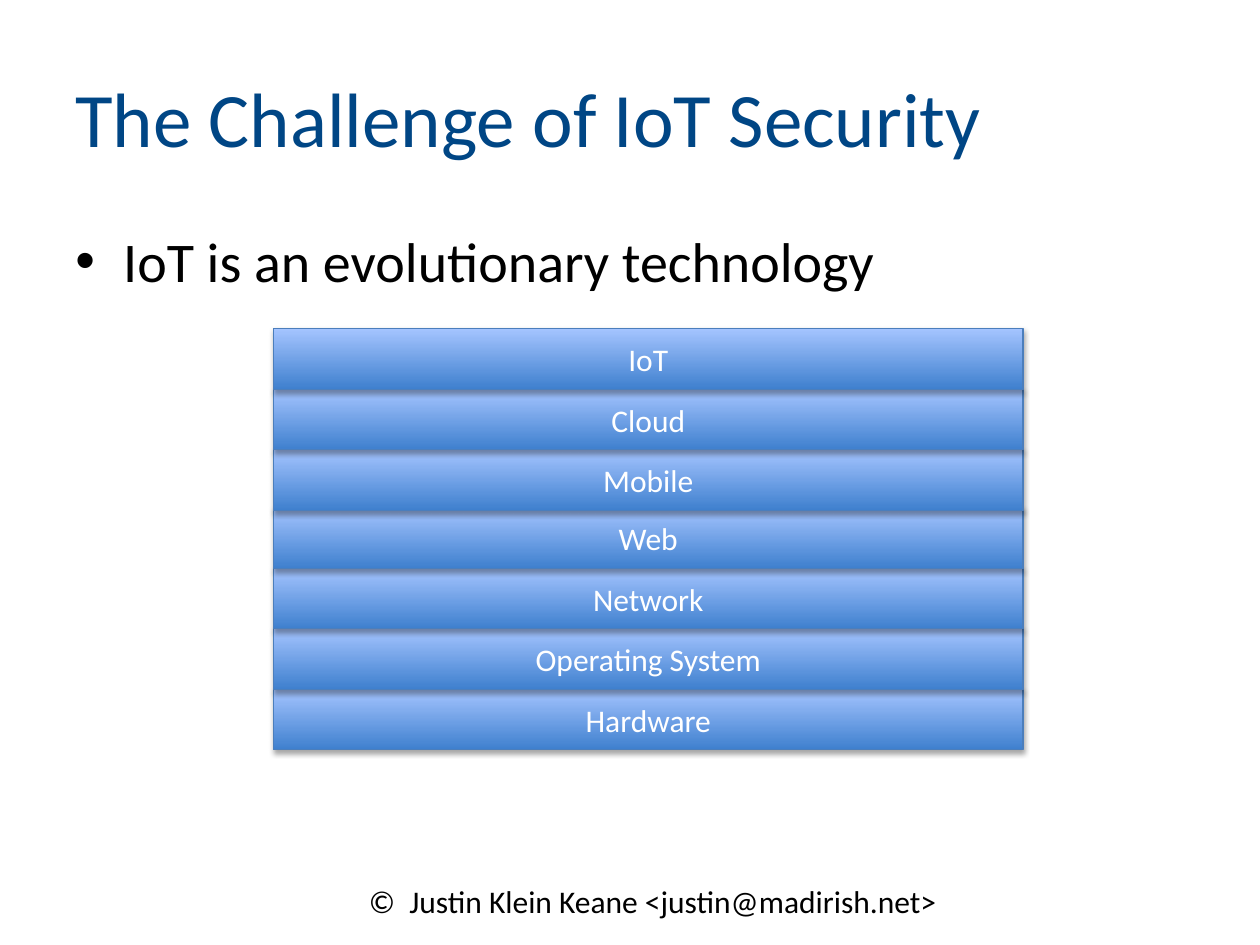
from lxml.etree import SubElement
from pptx import Presentation
from pptx.dml.color import RGBColor
from pptx.enum.shapes import MSO_SHAPE as Shape
from pptx.enum.text import MSO_ANCHOR as Anchor, PP_ALIGN as Align
from pptx.oxml.ns import qn
from pptx.util import Inches, Pt

FONT = "Calibri"
LAYER_LEFT, LAYER_WIDTH, LAYER_HEIGHT = 2.17, 5.95, 0.48
# Top of each stack and its layers, from top to bottom
STACKS = [
    (2.61, ["IoT", "Cloud", "Mobile"]),
    (4.03, ["Web", "Network", "Operating System", "Hardware"]),
]


def color(hex_string):
    return RGBColor.from_string(hex_string)


def set_text(shape, text, size, hex_color, anchor=Anchor.TOP, align=Align.LEFT, bullet_indent=0):
    frame = shape.text_frame
    frame.word_wrap = True
    frame.vertical_anchor = anchor
    paragraph = frame.paragraphs[0]
    paragraph.text = text
    paragraph.alignment = align
    if bullet_indent:
        properties = paragraph._p.get_or_add_pPr()
        properties.set("marL", str(Inches(bullet_indent)))
        properties.set("indent", str(-Inches(bullet_indent)))
        SubElement(properties, qn("a:buFont"), typeface="Arial")
        SubElement(properties, qn("a:buChar"), char="•")
    paragraph.font.name = FONT
    paragraph.font.size = Pt(size)
    paragraph.font.color.rgb = color(hex_color)


def add_text(slide, box, text, size, hex_color, **options):
    shape = slide.shapes.add_textbox(*map(Inches, box))
    set_text(shape, text, size, hex_color, **options)


def add_shadow(shape):
    shape.shadow.inherit = False
    effects = shape._element.spPr.find(qn("a:effectLst"))
    shadow = SubElement(effects, qn("a:outerShdw"), blurRad=str(Pt(3.1)), dist=str(Pt(1.8)),
                        dir="5400000", rotWithShape="0")
    black = SubElement(shadow, qn("a:srgbClr"), val="000000")
    SubElement(black, qn("a:alpha"), val="35000")


def add_layer(slide, top, label):
    box = (LAYER_LEFT, top, LAYER_WIDTH, LAYER_HEIGHT)
    layer = slide.shapes.add_shape(Shape.RECTANGLE, *map(Inches, box))
    layer.fill.gradient()
    layer.fill.gradient_angle = 90
    for stop, hex_color in zip(layer.fill.gradient_stops, ("3F80CE", "A4C4FF")):
        stop.color.rgb = color(hex_color)
    layer.line.color.rgb = color("4B7EBC")
    layer.line.width = Pt(0.75)
    add_shadow(layer)
    set_text(layer, label, 18, "FFFFFF", Anchor.MIDDLE, Align.CENTER)


def main():
    presentation = Presentation()
    presentation.slide_width, presentation.slide_height = Inches(10), Inches(7.5)
    slide = presentation.slides.add_slide(presentation.slide_layouts[6])

    # Title and bullet
    add_text(slide, (0.5, 0.3, 9, 1.25), "The Challenge of IoT Security", 44, "004685",
             anchor=Anchor.MIDDLE)
    add_text(slide, (0.5, 1.75, 9, 4.51), "IoT is an evolutionary technology", 32, "000000",
             bullet_indent=0.38)

    # Technology layers, drawn from the bottom up so each shadow falls on the layer below
    for stack_top, labels in reversed(STACKS):
        for row, label in reversed(list(enumerate(labels))):
            add_layer(slide, stack_top + row * LAYER_HEIGHT, label)

    # Copyright line
    add_text(slide, (2.83, 6.95, 4.83, 0.4), "©  Justin Klein Keane <justin@madirish.net>", 18, "000000")

    presentation.save("out.pptx")


if __name__ == "__main__":
    main()
